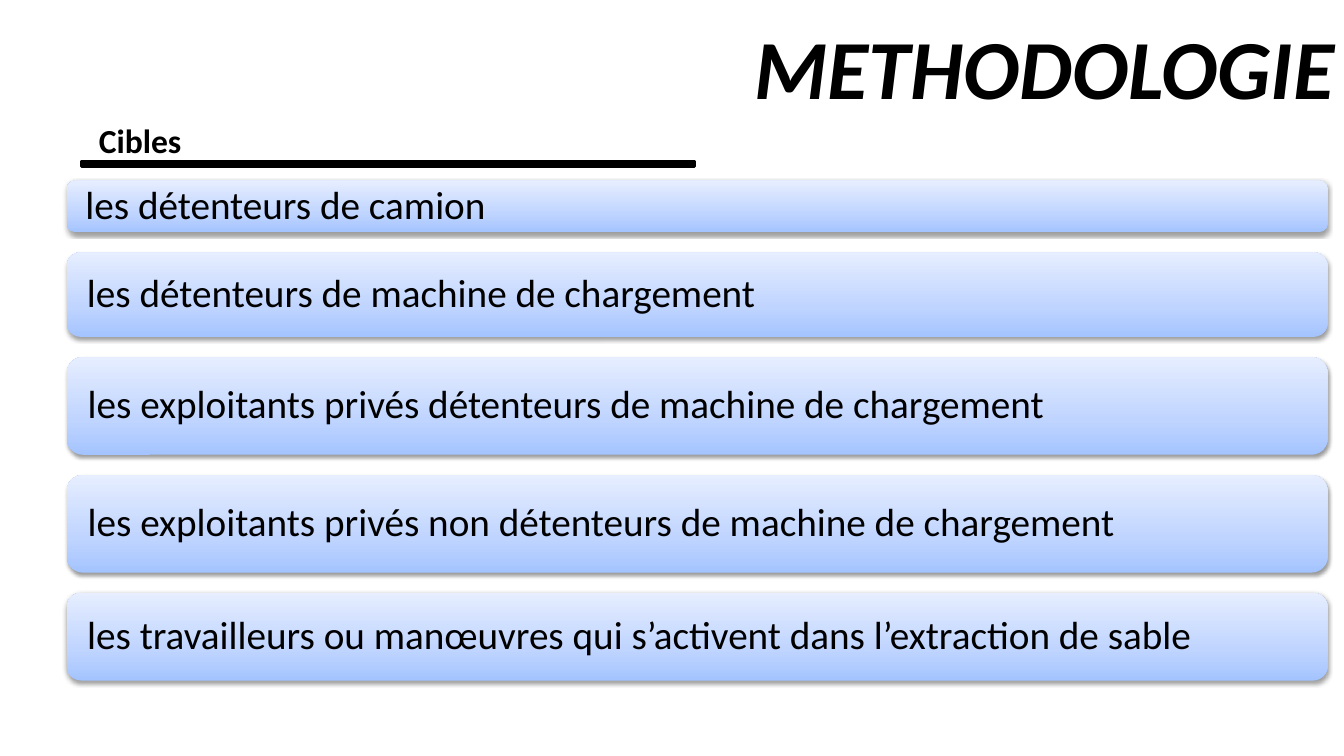
"""Build the METHODOLOGIE slide listing the survey targets."""
from copy import deepcopy
from dataclasses import dataclass

from lxml import etree
from pptx import Presentation
from pptx.dml.color import RGBColor
from pptx.enum.shapes import MSO_SHAPE
from pptx.enum.text import MSO_ANCHOR, PP_ALIGN
from pptx.oxml.ns import qn
from pptx.util import Cm, Pt

RECT = MSO_SHAPE.RECTANGLE
ROUNDED = MSO_SHAPE.ROUNDED_RECTANGLE
MIDDLE = MSO_ANCHOR.MIDDLE
LEFT, RIGHT = PP_ALIGN.LEFT, PP_ALIGN.RIGHT

BLACK = RGBColor(0x00, 0x00, 0x00)
BAR_STOPS = (
    (0.0, RGBColor(0xA4, 0xC4, 0xFF)),
    (0.35, RGBColor(0xBF, 0xD4, 0xFF)),
    (1.0, RGBColor(0xE6, 0xEE, 0xFF)),
)
FONT = "Calibri"
BAR_LEFT, BAR_TOP, BAR_WIDTH, BAR_GAP = 1.68, 4.55, 31.78, 0.51


@dataclass(frozen=True)
class Target:
    text: str
    height: float


TARGETS = (
    Target("les détenteurs de camion", 1.3),
    Target("les détenteurs de machine de chargement", 2.13),
    Target("les exploitants privés détenteurs de machine de chargement", 2.46),
    Target("les exploitants privés non détenteurs de machine de chargement", 2.46),
    Target("les travailleurs ou manœuvres qui s’activent dans l’extraction de sable", 2.21),
)


def write(sp, text: str, *, size: float, bold: bool = False, italic: bool = False,
          align=LEFT, inset: float = 0, spacing: float = 1.0, wrap: bool = True) -> None:
    tf = sp.text_frame
    tf.word_wrap = wrap
    tf.vertical_anchor = MIDDLE
    tf.margin_left = tf.margin_right = Cm(inset)
    tf.margin_top = tf.margin_bottom = 0
    p = tf.paragraphs[0]
    p.alignment = align
    p.line_spacing = spacing
    r = p.add_run()
    r.text = text
    r.font.name = FONT
    r.font.size = Pt(size)
    r.font.bold = bold
    r.font.italic = italic
    r.font.color.rgb = BLACK


def fill_gradient(sp) -> None:
    sp.fill.gradient()
    sp.fill.gradient_angle = 90
    stop_list = sp._element.spPr.find(qn("a:gradFill")).find(qn("a:gsLst"))
    stop_list.append(deepcopy(stop_list[0]))
    for stop, (position, color) in zip(sp.fill.gradient_stops, BAR_STOPS):
        stop.position = position
        stop.color.rgb = color


def add_shadow(sp) -> None:
    sp.shadow.inherit = False
    effects = sp._element.spPr.find(qn("a:effectLst"))
    shadow = etree.SubElement(effects, qn("a:outerShdw"), blurRad=str(Pt(3.1)),
                              dist=str(Pt(1.6)), dir="5400000", rotWithShape="0")
    color = etree.SubElement(shadow, qn("a:srgbClr"), val=str(BLACK))
    etree.SubElement(color, qn("a:alpha"), val="38000")


def add_bar(s, target: Target, top: float) -> None:
    sp = s.shapes.add_shape(ROUNDED, Cm(BAR_LEFT), Cm(top), Cm(BAR_WIDTH), Cm(target.height))
    fill_gradient(sp)
    sp.line.fill.background()
    add_shadow(sp)
    write(sp, target.text, size=28, inset=0.41, spacing=0.9)


def add_rule(s) -> None:
    sp = s.shapes.add_shape(RECT, Cm(2.06), Cm(4.06), Cm(15.44), Cm(0.13))
    sp.fill.solid()
    sp.fill.fore_color.rgb = BLACK
    sp.line.color.rgb = BLACK
    sp.line.width = Pt(2)
    sp.shadow.inherit = False


def main() -> None:
    prs = Presentation()
    prs.slide_width, prs.slide_height = Cm(33.87), Cm(19.05)
    s = prs.slides.add_slide(prs.slide_layouts[6])
    title = s.shapes.add_textbox(Cm(2.06), Cm(0.1), Cm(31.82), Cm(3.1))
    write(title, "METHODOLOGIE", size=60, bold=True, italic=True, align=RIGHT, inset=0.25)
    top = BAR_TOP
    for target in TARGETS:
        add_bar(s, target, top)
        top += target.height + BAR_GAP
    heading = s.shapes.add_textbox(Cm(2.49), Cm(3.02), Cm(2.29), Cm(1.02))
    write(heading, "Cibles", size=24, bold=True, wrap=False)
    add_rule(s)
    prs.save("out.pptx")


if __name__ == "__main__":
    main()
